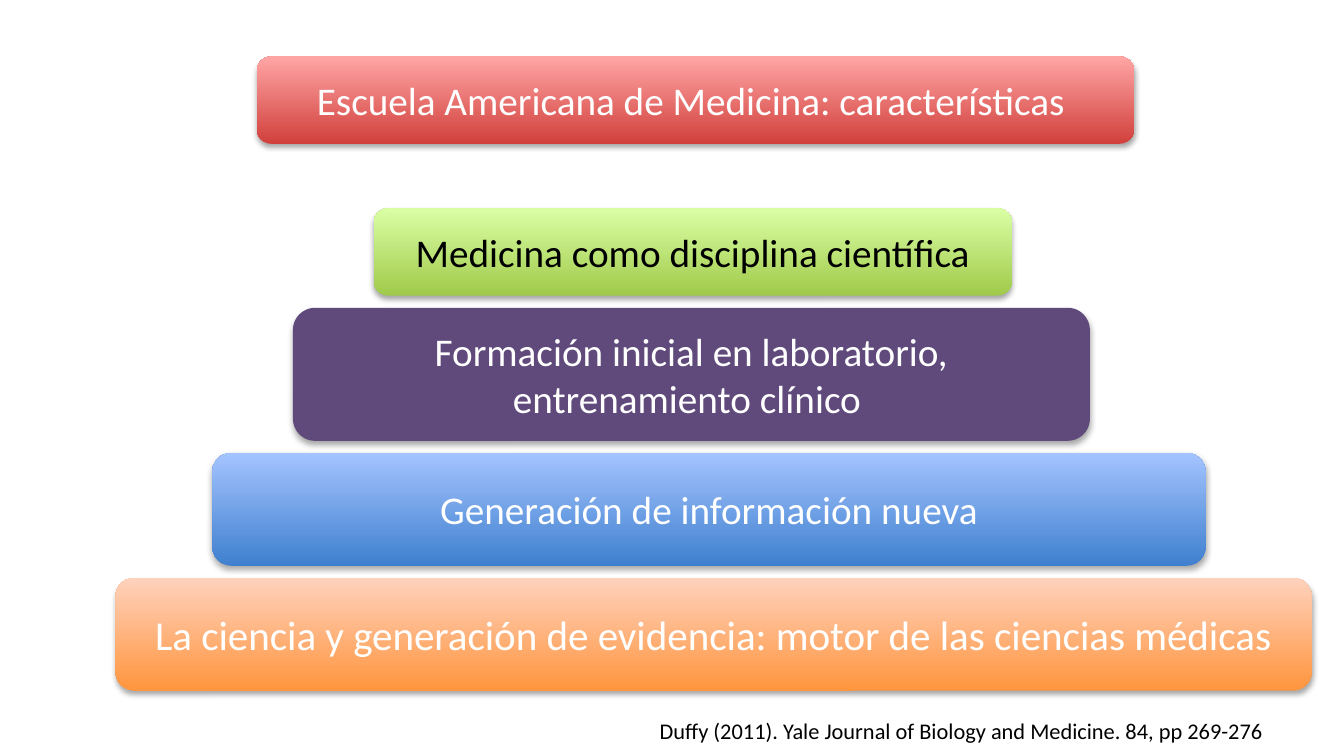
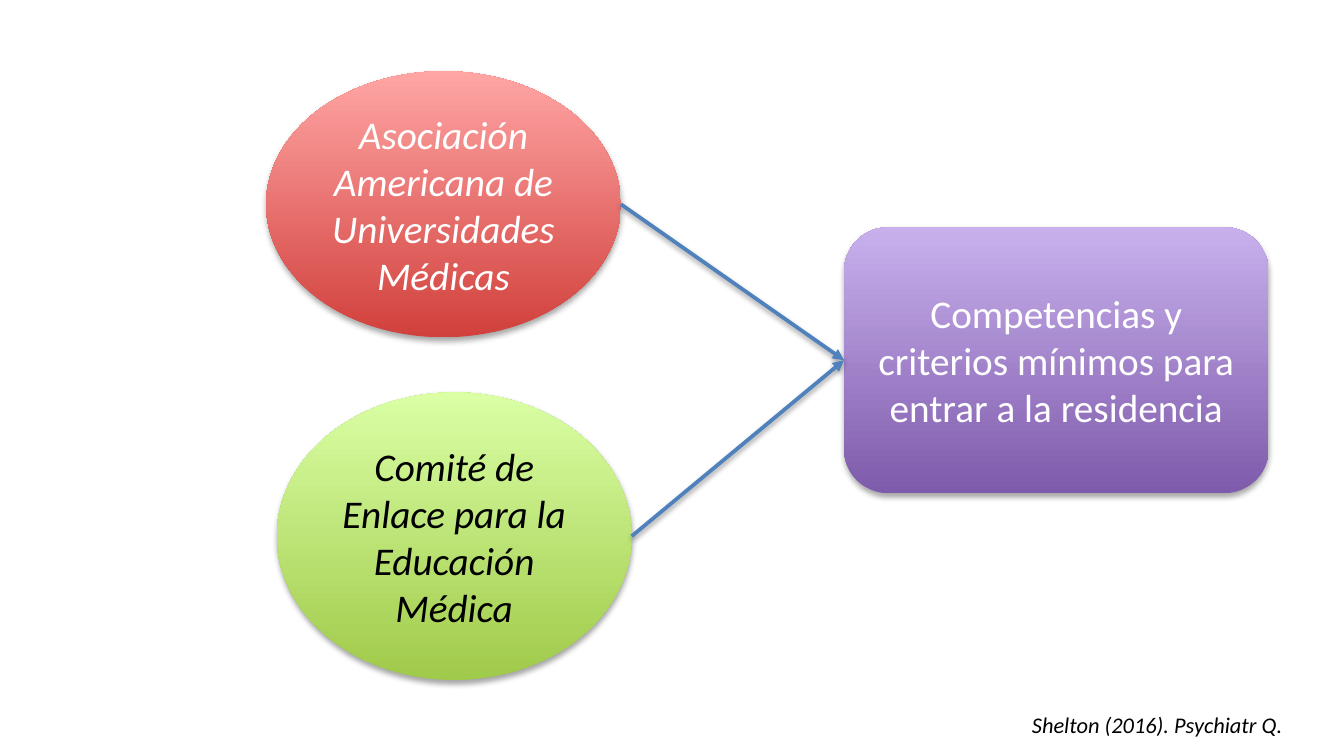
from lxml import etree
from pptx import Presentation
from pptx.dml.color import RGBColor
from pptx.enum import shapes, text
from pptx.oxml import ns
from pptx.util import Inches, Pt

# Content: tiers are (text, left, width, height, colour, format)
TITLE = "Escuela Americana de Medicina: características "
TIERS = [
    ("Medicina como disciplina científica", 2.78, 4.75, 0.65, "green", {}),
    ("Formación inicial en laboratorio, entrenamiento clínico ",
     2.18, 5.93, 0.99, "plum", {}),
    ("Generación de información nueva", 1.58, 7.39, 0.84, "blue", {}),
    ("La ciencia y generación de evidencia: motor de las ciencias médicas",
     0.86, 8.9, 0.84, "orange", {"size": Pt(22)}),
]
TIER_TOP, TIER_GAP = 1.55, 0.09
BODIES = [
    ("Asociación Americana de Universidades Médicas", (1.98, 0.53, 2.64, 1.98), "red"),
    ("Comité de Enlace para la Educación Médica", (2.06, 2.92, 2.64, 2.14), "green"),
]
RESULT = "Competencias y criterios mínimos para entrar a la residencia"
SOURCES = [
    ("Duffy (2011). Yale Journal of Biology and Medicine. 84, pp 269-276",
     (4.81, 5.29, 5.08, 0.3), {}),
    ("Shelton (2016). Psychiatr Q.", (7.58, 5.24, 2.23, 0.3), {"italic": True}),
]

# Shared look: fills run from bottom to top
COLORS = {"white": "FFFFFF", "black": "000000", "arrow": "4F81BD"}
FILLS = {
    "red": ("D1403C", "FFA6A5"),
    "green": ("A0CA4A", "DAFFA5"),
    "plum": ("604A7B",),
    "blue": ("3F80CE", "A4C4FF"),
    "orange": ("FF953E", "FFD2BD"),
    "purple": ("7F5BAB", "C8B0ED"),
}
ROUND = shapes.MSO_SHAPE.ROUNDED_RECTANGLE
OVAL = shapes.MSO_SHAPE.OVAL


def rgb(name):
    return RGBColor.from_string(COLORS.get(name, name))


def add_shadow(sp, alpha, dist):
    """Give a shape or connector a soft shadow that falls straight down."""
    pr = sp._element.spPr
    effects = etree.SubElement(pr, ns.qn("a:effectLst"))
    outer = etree.SubElement(effects, ns.qn("a:outerShdw"), blurRad=str(Pt(3.1)),
                             dist=str(Pt(dist)), dir="5400000", rotWithShape="0")
    color = etree.SubElement(outer, ns.qn("a:srgbClr"), val=COLORS["black"])
    etree.SubElement(color, ns.qn("a:alpha"), val=str(alpha * 1000))


def write(sp, words, color, **formats):
    tf = sp.text_frame
    tf.word_wrap = True
    p = tf.paragraphs[0]
    r = p.add_run()
    r.text = words
    r.font.color.rgb = rgb(color)
    for key, value in {"name": "Calibri", "size": Pt(21), **formats}.items():
        setattr(r.font, key, value)
    return tf, p


def add_block(parent, kind, words, box, fill, **formats):
    sp = parent.add_shape(kind, *map(Inches, box))
    stops = FILLS[fill]
    if len(stops) == 1:
        sp.fill.solid()
        sp.fill.fore_color.rgb = rgb(stops[0])
    else:
        sp.fill.gradient()
        sp.fill.gradient_angle = 90
        for stop, color in zip(sp.fill.gradient_stops, stops):
            stop.color.rgb = rgb(color)
    sp.line.fill.background()
    add_shadow(sp, 35, 1.8)
    tf, p = write(sp, words, "black" if fill == "green" else "white", **formats)
    tf.vertical_anchor = text.MSO_ANCHOR.MIDDLE
    p.alignment = text.PP_ALIGN.CENTER
    return sp


def add_arrow(s, start, end):
    """Arrow from the right of one block to the left side of another."""
    line = s.shapes.add_connector(
        shapes.MSO_CONNECTOR.STRAIGHT, start.left + start.width,
        start.top + start.height // 2, end.left, end.top + end.height // 2)
    line.end_connect(end, 1)
    line.line.color.rgb = rgb("arrow")
    line.line.width = Pt(2)
    etree.SubElement(line.line._get_or_add_ln(), ns.qn("a:tailEnd"), type="triangle")
    add_shadow(line, 38, 1.6)


def add_source(s, words, box, formats):
    sp = s.shapes.add_textbox(*map(Inches, box))
    tf, p = write(sp, words, "black", size=Pt(12), **formats)
    tf.auto_size = text.MSO_AUTO_SIZE.SHAPE_TO_FIT_TEXT


def build_school(s):
    pyramid = s.shapes.add_group_shape().shapes
    top = TIER_TOP
    for words, left, width, height, fill, formats in TIERS:
        add_block(pyramid, ROUND, words, (left, top, width, height), fill, **formats)
        top += height + TIER_GAP
    add_block(s.shapes, ROUND, TITLE, (1.91, 0.42, 6.53, 0.65), "red")


def build_residency(s):
    ovals = [add_block(s.shapes, OVAL, *body, italic=True) for body in BODIES]
    result = add_block(s.shapes, ROUND, RESULT, (6.28, 1.69, 3.16, 1.98), "purple")
    for oval in ovals:
        add_arrow(s, oval, result)


def main():
    prs = Presentation()
    prs.slide_width = Inches(10)
    prs.slide_height = prs.slide_width * 9 // 16
    for build, source in zip((build_school, build_residency), SOURCES):
        s = prs.slides.add_slide(prs.slide_layouts[6])
        build(s)
        add_source(s, *source)
    prs.save("out.pptx")


if __name__ == "__main__":
    main()
